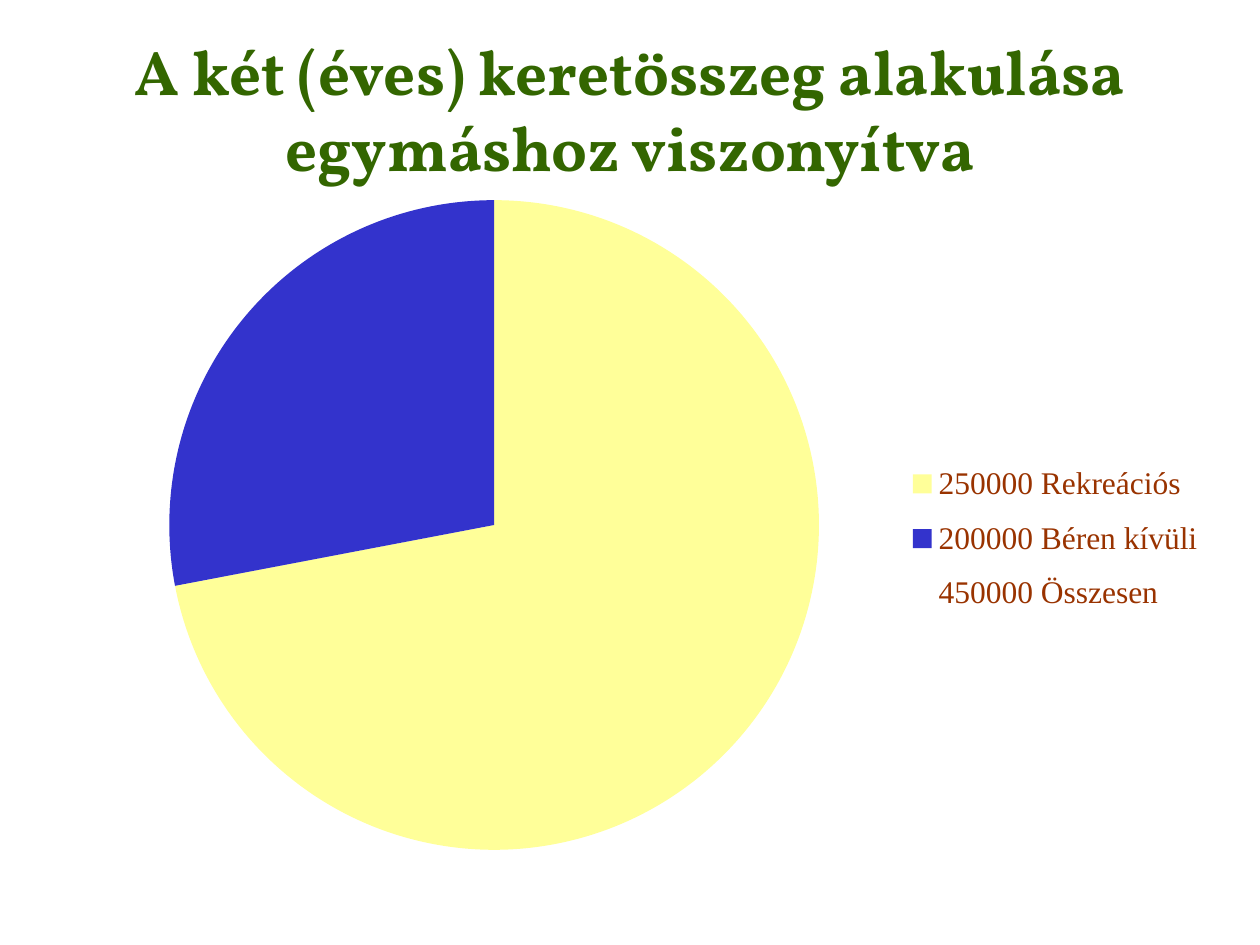
"""Build a slide with a pie chart comparing two yearly budget frames."""
import pptx
import pptx.chart.data
import pptx.dml.color
import pptx.enum.chart
import pptx.enum.text
import pptx.oxml
import pptx.oxml.ns
import pptx.util

Pt = pptx.util.Pt
RGBColor = pptx.dml.color.RGBColor
GREEN = RGBColor(0x33, 0x66, 0x00)
BROWN = RGBColor(0x99, 0x33, 0x00)
YELLOW = RGBColor(0xFF, 0xFF, 0x99)
BLUE = RGBColor(0x33, 0x33, 0xCC)
WHITE = RGBColor(0xFF, 0xFF, 0xFF)


def make_layout(x, y, w, h, inner=False):
    target = '<c:layoutTarget val="inner"/>' if inner else ""
    return pptx.oxml.parse_xml(
        f'<c:layout {pptx.oxml.ns.nsdecls("c")}><c:manualLayout>{target}'
        '<c:xMode val="edge"/><c:yMode val="edge"/>'
        f'<c:x val="{x}"/><c:y val="{y}"/><c:w val="{w}"/><c:h val="{h}"/>'
        '</c:manualLayout></c:layout>')


prs = pptx.Presentation()
prs.slide_width, prs.slide_height = Pt(720), Pt(540)
s = prs.slides.add_slide(prs.slide_layouts[5])

title = s.shapes.title
title.left, title.top, title.width, title.height = Pt(36), Pt(15), Pt(648), Pt(85)
tf = title.text_frame
tf.word_wrap = True
tf.auto_size = pptx.enum.text.MSO_AUTO_SIZE.NONE
tf.vertical_anchor = pptx.enum.text.MSO_ANCHOR.TOP
p = tf.paragraphs[0]
p.text = "A két (éves) keretösszeg alakulása egymáshoz viszonyítva"
p.alignment = pptx.enum.text.PP_ALIGN.CENTER
p.space_before = Pt(0)
p.font.name, p.font.size, p.font.bold = "Vollkorn", Pt(36), True
p.font.color.rgb = GREEN

data = pptx.chart.data.CategoryChartData()
data.categories = ["250000 Rekreációs", "200000 Béren kívüli", "450000 Összesen"]
data.add_series("Series 1", [72, 28, None])
chart = s.shapes.add_chart(pptx.enum.chart.XL_CHART_TYPE.PIE,
                           Pt(36), Pt(106), Pt(675), Pt(392), data).chart
chart.has_title = False
chart.font.name, chart.font.size = "Times New Roman", Pt(18)
chart.font.color.rgb = BROWN

plot = chart.plots[0]
plot.vary_by_categories = True
for i, color in enumerate([YELLOW, BLUE, WHITE]):
    point = plot.series[0].points[i]
    point.format.fill.solid()
    point.format.fill.fore_color.rgb = color
    point.format.line.fill.background()

chart.has_legend = True
legend = chart.legend
legend.position = pptx.enum.chart.XL_LEGEND_POSITION.RIGHT
legend.include_in_layout = False

area = chart.element.find(".//" + pptx.oxml.ns.qn("c:plotArea"))
for parent, index, layout in [
        (area, 0, make_layout(0.09, 0.02, 0.55, 0.95, inner=True)),
        (legend._element, 1, make_layout(0.71, 0.38, 0.26, 0.27))]:
    for old in parent.findall(pptx.oxml.ns.qn("c:layout")):
        parent.remove(old)
    parent.insert(index, layout)

prs.save("out.pptx")
